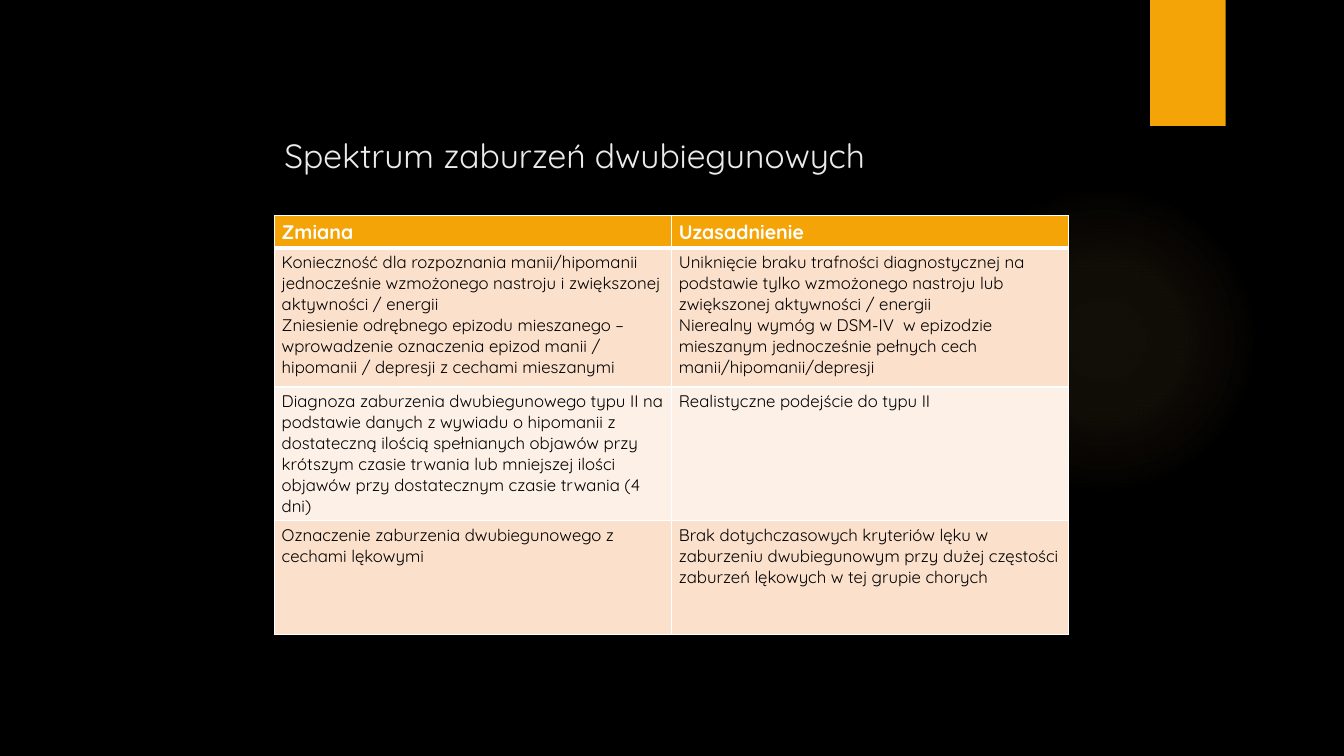
from dataclasses import dataclass

from lxml import etree
from pptx import Presentation
from pptx import util as u
from pptx.dml.color import RGBColor
from pptx.enum import shapes, text
from pptx.oxml import parse_xml
from pptx.oxml.ns import nsdecls, qn


@dataclass(frozen=True)
class Theme:
    font: str = "Quicksand"
    background: str = "000000"
    accent: str = "F5A408"
    glow: str = "FAC96A"
    title: str = "EBEBEB"
    white: str = "FFFFFF"
    body: str = "000000"
    bands: tuple[str, str] = ("FBE0CC", "FDF0E7")
    title_size: float = 24
    header_size: float = 14
    body_size: float = 12


@dataclass(frozen=True)
class Row:
    height: float
    change: str
    reason: str


THEME = Theme()
TABLE_LEFT, TABLE_TOP, COLUMN_WIDTH = 195.84, 154.08, 283.68
ROWS = [
    Row(21.6, "Zmiana", "Uzasadnienie"),
    Row(99.36,
        "Konieczność dla rozpoznania manii/hipomanii jednocześnie wzmożonego nastroju "
        "i zwiększonej aktywności / energii\n"
        "Zniesienie odrębnego epizodu mieszanego – wprowadzenie oznaczenia epizod manii / "
        "hipomanii / depresji z cechami mieszanymi",
        "Uniknięcie braku trafności diagnostycznej na podstawie tylko wzmożonego nastroju "
        "lub zwiększonej aktywności / energii\n"
        "Nierealny wymóg w DSM-IV  w epizodzie mieszanym jednocześnie pełnych cech "
        "manii/hipomanii/depresji"),
    Row(81.36,
        "Diagnoza zaburzenia dwubiegunowego typu II na podstawie danych z wywiadu o "
        "hipomanii z dostateczną ilością spełnianych objawów przy krótszym czasie trwania "
        "lub mniejszej ilości objawów przy dostatecznym czasie trwania (4 dni)",
        "Realistyczne podejście do typu II"),
    Row(81.36,
        "Oznaczenie zaburzenia dwubiegunowego z cechami lękowymi",
        "Brak dotychczasowych kryteriów lęku w zaburzeniu dwubiegunowym przy dużej "
        "częstości zaburzeń lękowych w tej grupie chorych"),
]


def write(frame, content: str, *, size: float, color: str, bold: bool = False) -> None:
    frame.word_wrap = True
    frame.text = content
    for paragraph in frame.paragraphs:
        paragraph.alignment = text.PP_ALIGN.LEFT
        for run in paragraph.runs:
            run.font.name = THEME.font
            run.font.size = u.Pt(size)
            run.font.bold = bold
            run.font.color.rgb = RGBColor.from_string(color)


def add_plain_shape(slide, kind, left: float, top: float, width: float, height: float):
    shape = slide.shapes.add_shape(kind, u.Pt(left), u.Pt(top), u.Pt(width), u.Pt(height))
    shape.shadow.inherit = False
    shape.line.fill.background()
    return shape


def add_glow(slide) -> None:
    glow = add_plain_shape(slide, shapes.MSO_SHAPE.OVAL, 677.52, 131.76, 221.76, 221.76)
    glow.fill.background()
    stops = "".join(
        f'<a:gs pos="{position * 1000}"><a:srgbClr val="{THEME.glow}">'
        f'<a:alpha val="{opacity * 1000}"/></a:srgbClr></a:gs>'
        for position, opacity in ((0, 7), (36, 6), (69, 0)))
    gradient = parse_xml(
        f'<a:gradFill {nsdecls("a")}><a:gsLst>{stops}</a:gsLst><a:path path="circle">'
        '<a:fillToRect l="50000" t="50000" r="50000" b="50000"/></a:path></a:gradFill>')
    properties = glow.element.spPr
    properties.replace(properties.find(qn("a:noFill")), gradient)


def set_borders(cell, widths: dict[str, float]) -> None:
    properties = cell._tc.get_or_add_tcPr()
    for side, width in widths.items():
        line = etree.SubElement(properties, qn(f"a:ln{side}"), w=str(u.Pt(width)))
        fill = etree.SubElement(line, qn("a:solidFill"))
        etree.SubElement(fill, qn("a:srgbClr"), val=THEME.white)


def add_changes_table(slide) -> None:
    table = slide.shapes.add_table(
        len(ROWS), 2, u.Pt(TABLE_LEFT), u.Pt(TABLE_TOP), u.Pt(2 * COLUMN_WIDTH),
        u.Pt(sum(row.height for row in ROWS))).table
    table.horz_banding = False
    for column in table.columns:
        column.width = u.Pt(COLUMN_WIDTH)
    for index, row in enumerate(ROWS):
        table.rows[index].height = u.Pt(row.height)
        header = index == 0
        for cell, content in zip(table.rows[index].cells, (row.change, row.reason)):
            cell.margin_left = cell.margin_right = u.Pt(5.4)
            cell.margin_top = cell.margin_bottom = u.Pt(2.7)
            # The rule below the header is the only heavy one
            set_borders(cell, {"L": 1, "R": 1, "T": 3 if index == 1 else 1,
                               "B": 3 if header else 1})
            cell.fill.solid()
            cell.fill.fore_color.rgb = RGBColor.from_string(
                THEME.accent if header else THEME.bands[(index - 1) % 2])
            write(cell.text_frame, content, bold=header,
                  size=THEME.header_size if header else THEME.body_size,
                  color=THEME.white if header else THEME.body)


def main() -> None:
    deck = Presentation()
    deck.slide_width, deck.slide_height = u.Pt(960), u.Pt(540)
    slide = deck.slides.add_slide(deck.slide_layouts[5])
    slide.background.fill.solid()
    slide.background.fill.fore_color.rgb = RGBColor.from_string(THEME.background)

    # Backdrop: faint glow and top tab
    add_glow(slide)
    tab = add_plain_shape(slide, shapes.MSO_SHAPE.RECTANGLE, 821.52, 0, 54, 90)
    tab.fill.solid()
    tab.fill.fore_color.rgb = RGBColor.from_string(THEME.accent)

    # Title
    title = slide.shapes.title
    title.left, title.top = u.Pt(TABLE_LEFT), u.Pt(92.88)
    title.width, title.height = u.Pt(566.64), u.Pt(77.04)
    title.text_frame.auto_size = text.MSO_AUTO_SIZE.NONE
    title.text_frame.vertical_anchor = text.MSO_ANCHOR.TOP
    write(title.text_frame, "Spektrum zaburzeń dwubiegunowych",
          size=THEME.title_size, color=THEME.title)

    # Changes and their reasons
    add_changes_table(slide)
    deck.save("out.pptx")


if __name__ == "__main__":
    main()
